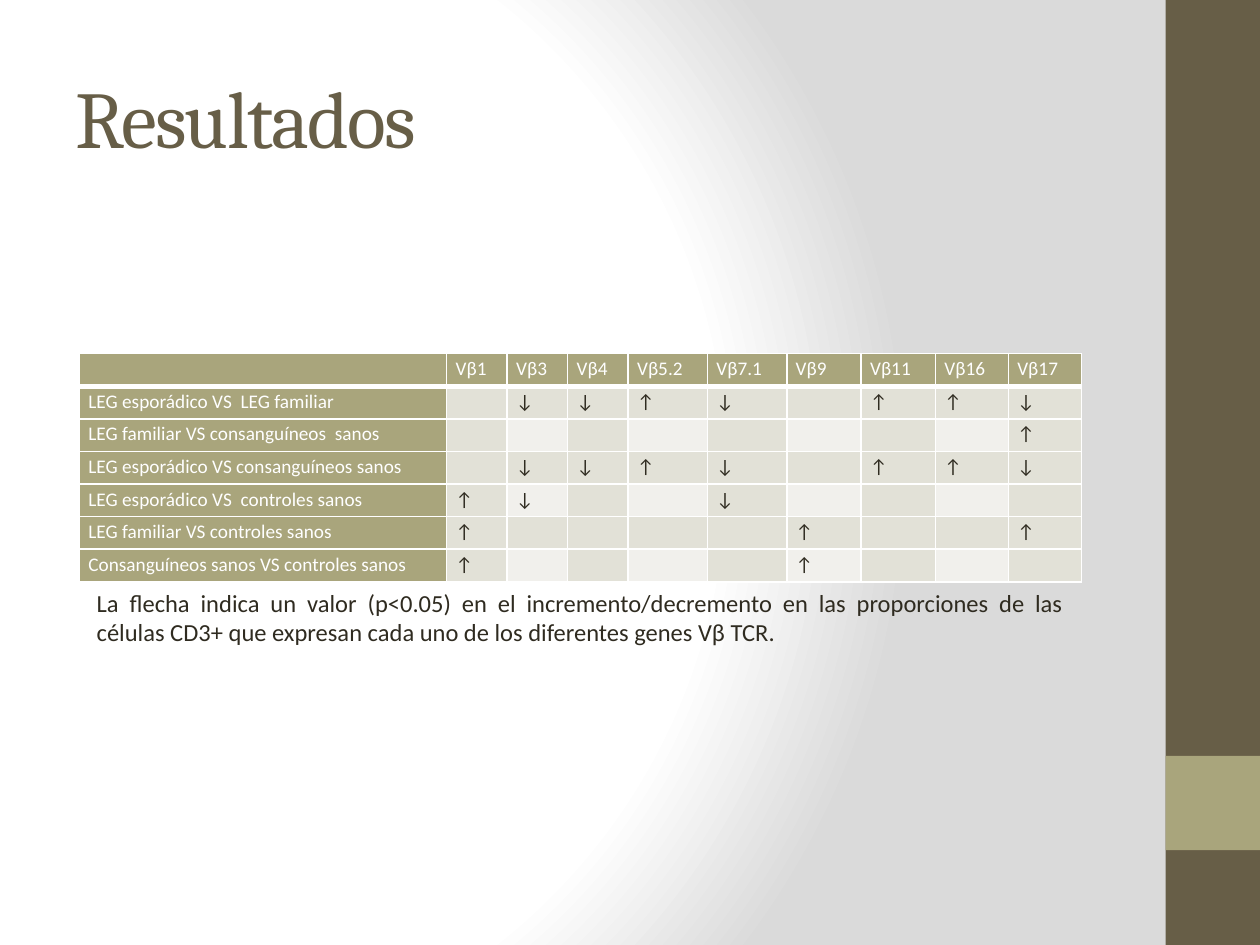
"""Builds the results slide with its T-cell receptor table."""
from collections import namedtuple
from dataclasses import dataclass

from lxml import etree
from pptx import Presentation
from pptx.dml.color import RGBColor
from pptx.enum import shapes, text
from pptx.oxml.ns import qn
from pptx.util import Cm, Pt

Box = namedtuple("Box", "x y w h")


@dataclass(frozen=True)
class Theme:
    """Colours, fonts and type sizes of the slide."""
    dark: str = "675E47"
    accent: str = "A9A57C"
    ink: str = "2F2B20"
    white: str = "FFFFFF"
    grey: str = "DADADA"
    band: str = "E2E1D7"
    light: str = "F1F0EC"
    heading: str = "Cambria"
    body: str = "Calibri"
    title_size: int = 46
    note_size: int = 14
    cell_size: int = 11


T = Theme()

HEADS = ["", "Vβ1", "Vβ3", "Vβ4", "Vβ5.2", "Vβ7.1", "Vβ9", "Vβ11", "Vβ16", "Vβ17"]
COMPARISONS = [
    ("LEG esporádico VS  LEG familiar", " ↓↓↑↓ ↑↑↓"),
    ("LEG familiar VS consanguíneos  sanos", "        ↑"),
    ("LEG esporádico VS consanguíneos sanos", " ↓↓↑↓ ↑↑↓"),
    ("LEG esporádico VS  controles sanos", "↑↓  ↓    "),
    ("LEG familiar VS controles sanos", "↑    ↑  ↑"),
    ("Consanguíneos sanos VS controles sanos", "↑    ↑   "),
]
COL_WIDTHS = [7.41] + [1.22] * 3 + [1.6] * 2 + [1.5] * 2 + [1.47] * 2
NOTE = ("La flecha indica un valor (p<0.05) en el incremento/decremento en las "
        "proporciones de las células CD3+ que expresan cada uno de los "
        "diferentes genes Vβ TCR.")


def lengths(box):
    """Turn a box in centimetres into slide lengths."""
    return [Cm(v) for v in box]


def write(tf, words, *, size, color, font=T.body, align=None, line=None, spacing=None):
    """Put formatted text in the first paragraph of a text frame."""
    p = tf.paragraphs[0]
    p.alignment = align
    p.line_spacing = line
    if not words:
        etree.SubElement(p._p, qn("a:endParaRPr"), sz=str(size * 100))
        return
    r = p.add_run()
    r.text = words
    r.font.size = Pt(size)
    r.font.name = font
    r.font.color.rgb = RGBColor.from_string(color)
    if spacing is not None:
        r._r.get_or_add_rPr().set("spc", str(spacing * 100))


def add_background(s):
    """Fill the slide with a circular gradient from white to grey."""
    s.background.fill.solid()
    props = s.element.find(".//" + qn("p:bgPr"))
    grad = etree.Element(qn("a:gradFill"), rotWithShape="1")
    stops = etree.SubElement(grad, qn("a:gsLst"))
    for pos, color in ((0, T.white), (75, T.white), (100, T.grey)):
        stop = etree.SubElement(stops, qn("a:gs"), pos=str(pos * 1000))
        etree.SubElement(stop, qn("a:srgbClr"), val=color)
    path = etree.SubElement(grad, qn("a:path"), path="circle")
    etree.SubElement(path, qn("a:fillToRect"), l="20000", t="50000", r="100000", b="50000")
    props.replace(props[0], grad)


def add_sidebar(s, box):
    """Draw the dark side band and its square accent."""
    square = Box(box.x, box.y + 0.8 * box.h, box.w, box.w)
    for part, color in ((box, T.dark), (square, T.accent)):
        sp = s.shapes.add_shape(shapes.MSO_SHAPE.RECTANGLE, *lengths(part))
        sp.shadow.inherit = False
        sp.fill.solid()
        sp.fill.fore_color.rgb = RGBColor.from_string(color)
        sp.line.fill.background()


def add_text(s, box, words, anchor=text.MSO_ANCHOR.TOP, **fmt):
    """Add a wrapping text box."""
    tf = s.shapes.add_textbox(*lengths(box)).text_frame
    tf.word_wrap = True
    tf.vertical_anchor = anchor
    write(tf, words, **fmt)


def set_borders(cell, **widths):
    """Give a cell white borders, with widths in points by side."""
    props = cell._tc.get_or_add_tcPr()
    for i, side in enumerate("LRTB"):
        ln = etree.Element(qn("a:ln" + side), w=str(Pt(widths.get(side, 1))))
        fill = etree.SubElement(ln, qn("a:solidFill"))
        etree.SubElement(fill, qn("a:srgbClr"), val=T.white)
        props.insert(i, ln)


def cell_fill(row, col):
    """Pick the fill of a cell from its place in the grid."""
    if row == 0 or col == 0:
        return T.accent
    return T.light if row % 2 == 0 and col % 2 == 0 else T.band


def add_results_table(s, box):
    """Add the table of rises and falls by gene."""
    rows = [HEADS] + [[label, *marks] for label, marks in COMPARISONS]
    table = s.shapes.add_table(len(rows), len(HEADS), *lengths(box)).table
    table.first_row = table.horz_banding = False
    for column, width in zip(table.columns, COL_WIDTHS):
        column.width = Cm(box.w * width / sum(COL_WIDTHS))
    for i, values in enumerate(rows):
        table.rows[i].height = Cm(box.h / len(rows))
        for j, value in enumerate(values):
            cell = table.cell(i, j)
            cell.margin_left = cell.margin_right = Cm(0.18)
            cell.margin_top = cell.margin_bottom = 0
            cell.fill.solid()
            cell.fill.fore_color.rgb = RGBColor.from_string(cell_fill(i, j))
            set_borders(cell, B=3 if i == 0 else 1)
            write(cell.text_frame, value.strip(), size=T.cell_size,
                  color=T.white if i == 0 or j == 0 else T.ink,
                  align=text.PP_ALIGN.JUSTIFY, line=1.15)


def main():
    """Build and save the slide."""
    prs = Presentation()
    prs.slide_width, prs.slide_height = Cm(25.4), Cm(19.05)
    s = prs.slides.add_slide(prs.slide_layouts[6])
    add_background(s)
    add_sidebar(s, Box(23.5, 0, 1.9, 19.05))
    add_text(s, Box(1.27, 0.76, 21.16, 3.18), "Resultados", text.MSO_ANCHOR.MIDDLE,
             size=T.title_size, color=T.dark, font=T.heading, spacing=-1)
    add_results_table(s, Box(1.6, 7.13, 20.2, 4.6))
    add_text(s, Box(1.7, 11.73, 20, 1.45), NOTE, size=T.note_size, color=T.ink,
             align=text.PP_ALIGN.JUSTIFY)
    prs.save("out.pptx")


if __name__ == "__main__":
    main()
